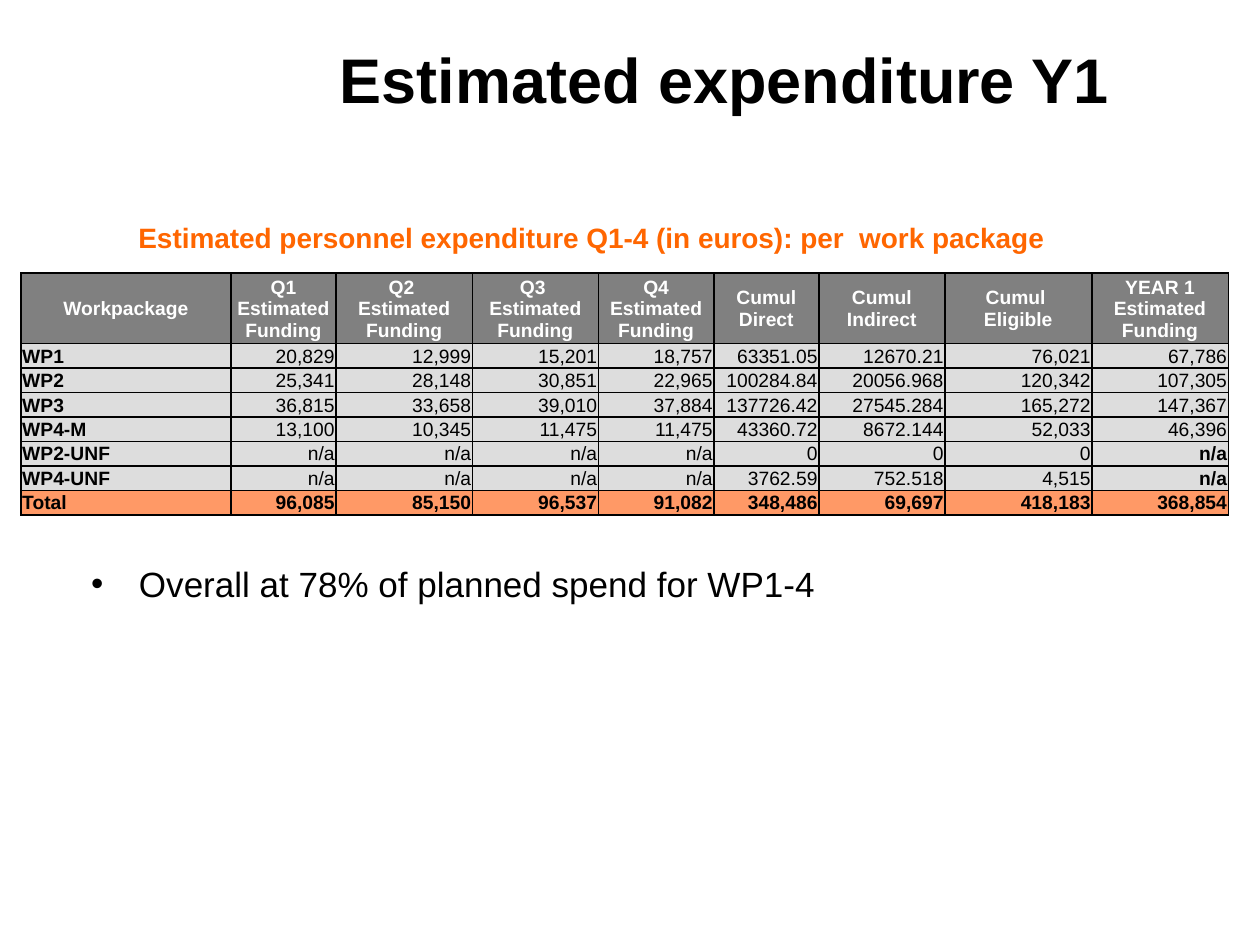
from lxml import etree
from pptx import Presentation, util as u
from pptx.dml.color import RGBColor
from pptx.enum import text
from pptx.oxml import ns

BLACK = RGBColor(0x00, 0x00, 0x00)
WHITE = RGBColor(0xFF, 0xFF, 0xFF)
ORANGE = RGBColor(0xFF, 0x66, 0x00)
HEADER_GREY = RGBColor(0x80, 0x80, 0x80)
BODY_GREY = RGBColor(0xDD, 0xDD, 0xDD)
TOTAL_ORANGE = RGBColor(0xFF, 0x99, 0x66)

FONT = "Arial"
GRID = u.Inches(1) / 12
COLUMN_UNITS = [20, 10, 13, 12, 11, 10, 12, 14, 13]
HEADER_SHARE = 0.29

HEADERS = [
    ["Workpackage"],
    ["Q1 Estimated", "Funding"],
    ["Q2 \nEstimated", "Funding"],
    ["Q3 \nEstimated", "Funding"],
    ["Q4 Estimated", "Funding"],
    ["Cumul Direct"],
    ["Cumul Indirect"],
    ["Cumul \nEligible"],
    ["YEAR 1 Estimated", "Funding"],
]
PACKAGES = [
    ["WP1", "20,829", "12,999", "15,201", "18,757", "63351.05", "12670.21", "76,021", "67,786"],
    ["WP2", "25,341", "28,148", "30,851", "22,965", "100284.84", "20056.968", "120,342", "107,305"],
    ["WP3", "36,815", "33,658", "39,010", "37,884", "137726.42", "27545.284", "165,272", "147,367"],
    ["WP4-M", "13,100", "10,345", "11,475", "11,475", "43360.72", "8672.144", "52,033", "46,396"],
    ["WP2-UNF", "n/a", "n/a", "n/a", "n/a", "0", "0", "0", "n/a"],
    ["WP4-UNF", "n/a", "n/a", "n/a", "n/a", "3762.59", "752.518", "4,515", "n/a"],
]
TOTALS = ["Total", "96,085", "85,150", "96,537", "91,082", "348,486", "69,697", "418,183", "368,854"]


def grid_box(left, top, width, height):
    return [round(units * GRID) for units in (left, top, width, height)]


def write_runs(paragraph, wording, size, color, bold, align):
    paragraph.alignment = align
    for index, line in enumerate(wording.split("\n")):
        if index:
            paragraph.add_line_break()
        run = paragraph.add_run()
        run.text = line
        run.font.name = FONT
        run.font.size = u.Pt(size)
        run.font.bold = bold
        run.font.color.rgb = color


def add_text_region(slide, box, wording, size, color=BLACK, bold=False,
                    align=text.PP_ALIGN.LEFT, anchor=text.MSO_ANCHOR.TOP, bullet=False):
    frame = slide.shapes.add_textbox(*box).text_frame
    frame.word_wrap = True
    frame.vertical_anchor = anchor
    paragraph = frame.paragraphs[0]
    if bullet:
        properties = paragraph._p.get_or_add_pPr()
        indent = u.Inches(0.38)
        properties.set("marL", str(indent))
        properties.set("indent", str(-indent))
        etree.SubElement(properties, ns.qn("a:buFont"), typeface=FONT)
        etree.SubElement(properties, ns.qn("a:buChar"), char="•")
    write_runs(paragraph, wording, size, color, bold, align)


def add_borders(cell):
    properties = cell._tc.get_or_add_tcPr()
    for side in ("lnL", "lnR", "lnT", "lnB"):
        line = etree.SubElement(properties, ns.qn(f"a:{side}"), w=str(u.Pt(1)))
        fill = etree.SubElement(line, ns.qn("a:solidFill"))
        etree.SubElement(fill, ns.qn("a:srgbClr"), val=str(BLACK))


def fill_cell(cell, lines, fill, color, bold, align):
    cell.margin_left = cell.margin_right = cell.margin_top = u.Inches(0.01)
    cell.margin_bottom = 0
    cell.vertical_anchor = text.MSO_ANCHOR.MIDDLE
    add_borders(cell)
    cell.fill.solid()
    cell.fill.fore_color.rgb = fill
    frame = cell.text_frame
    for index, line in enumerate(lines):
        paragraph = frame.add_paragraph() if index else frame.paragraphs[0]
        write_runs(paragraph, line, 11, color, bold, align)


def add_expenditure_table(slide, box):
    values = PACKAGES + [TOTALS]
    left, top, width, height = box
    table = slide.shapes.add_table(len(values) + 1, len(HEADERS), *box).table
    for column, units in zip(table.columns, COLUMN_UNITS):
        column.width = round(width * units / sum(COLUMN_UNITS))
    table.rows[0].height = round(height * HEADER_SHARE)
    for index, lines in enumerate(HEADERS):
        fill_cell(table.cell(0, index), lines, HEADER_GREY, WHITE, True, text.PP_ALIGN.CENTER)
    for row_index, row in enumerate(values, start=1):
        table.rows[row_index].height = round(height * (1 - HEADER_SHARE) / len(values))
        is_total = row is TOTALS
        fill = TOTAL_ORANGE if is_total else BODY_GREY
        for index, value in enumerate(row):
            is_label = index == 0
            is_missing_year = index == len(row) - 1 and value == "n/a"
            fill_cell(table.cell(row_index, index), [value], fill, BLACK,
                      is_total or is_label or is_missing_year,
                      text.PP_ALIGN.LEFT if is_label else text.PP_ALIGN.RIGHT)


def main():
    presentation = Presentation()
    presentation.slide_width = u.Inches(10)
    presentation.slide_height = u.Inches(7.5)
    slide = presentation.slides.add_slide(presentation.slide_layouts[6])
    add_text_region(slide, grid_box(15, 0, 108, 15), "Estimated expenditure Y1", 36, bold=True,
                    align=text.PP_ALIGN.CENTER, anchor=text.MSO_ANCHOR.MIDDLE)
    add_text_region(slide, grid_box(12, 20.4, 92, 4.4),
                    "Estimated personnel expenditure Q1-4 (in euros): per  work package",
                    16, ORANGE, bold=True)
    add_expenditure_table(slide, grid_box(2, 26, sum(COLUMN_UNITS), 23))
    add_text_region(slide, grid_box(7.5, 53, 108, 10),
                    "Overall at 78% of planned spend for WP1-4", 20, bullet=True)
    presentation.save("out.pptx")


if __name__ == "__main__":
    main()
